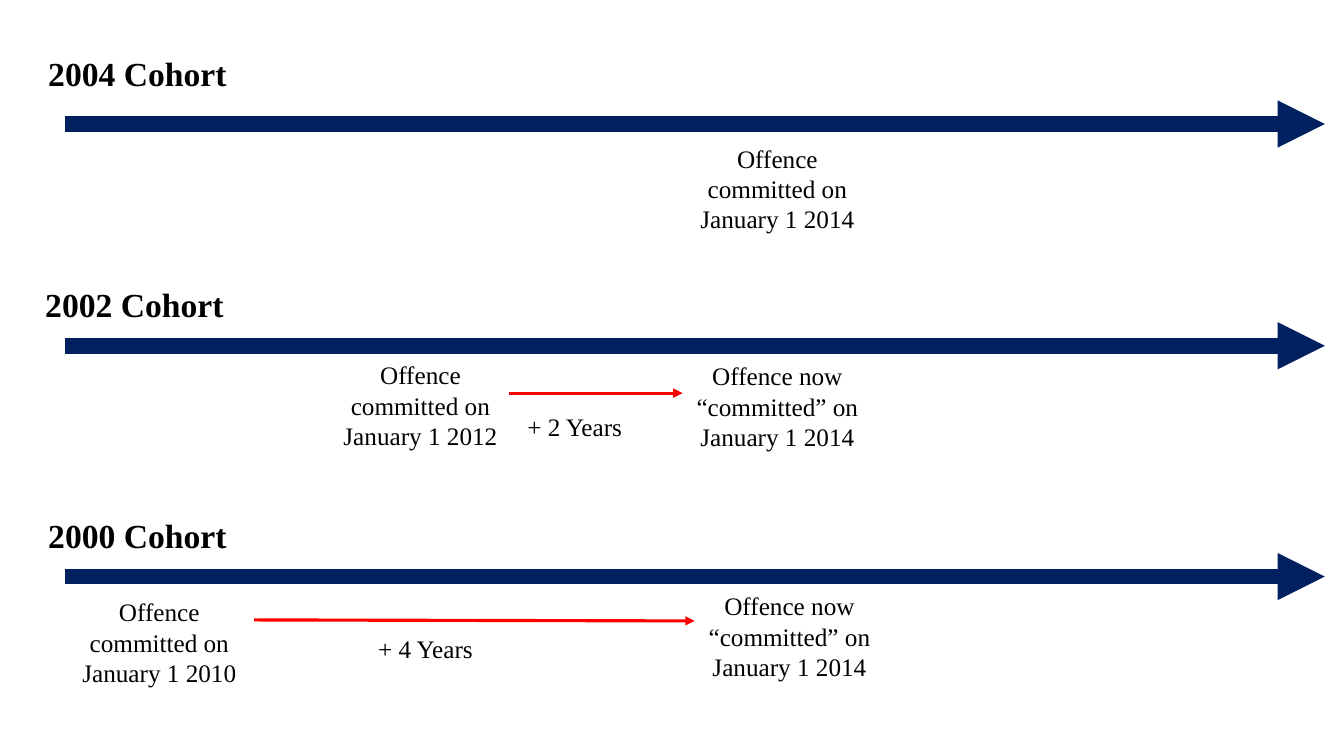
from lxml import etree
from pptx import Presentation
from pptx.dml.color import RGBColor
from pptx.enum import shapes, text
from pptx.oxml.ns import qn
from pptx.util import Inches, Pt

COLORS = {"ink": "000000", "timeline": "002060", "shift": "FF0000"}
FONT = "Times New Roman"


def add_label(page, words, left, top, width, height, size, bold=False, align=text.PP_ALIGN.CENTER):
    box = page.shapes.add_textbox(Inches(left), Inches(top), Inches(width), Inches(height))
    box.text_frame.word_wrap = True
    box.text_frame.auto_size = text.MSO_AUTO_SIZE.SHAPE_TO_FIT_TEXT
    para = box.text_frame.paragraphs[0]
    para.text = words
    para.alignment = align
    para.font.name = FONT
    para.font.size = Pt(size)
    para.font.bold = bold
    para.font.color.rgb = RGBColor.from_string(COLORS["ink"])


def add_arrow(page, start, end, color, weight):
    arrow = page.shapes.add_connector(
        shapes.MSO_CONNECTOR.STRAIGHT, *(Inches(value) for value in start + end)
    )
    arrow.line.color.rgb = RGBColor.from_string(COLORS[color])
    arrow.line.width = Pt(weight)
    etree.SubElement(arrow.line._get_or_add_ln(), qn("a:tailEnd"), type="triangle")
    etree.SubElement(arrow._element.spPr, qn("a:effectLst"))


deck = Presentation()
deck.slide_width = Inches(13.33)
deck.slide_height = Inches(7.5)
page = deck.slides.add_slide(deck.slide_layouts[6])

cohorts = [("2004 Cohort", 0.38, 0.48, 1.23), ("2002 Cohort", 0.35, 2.77, 3.43), ("2000 Cohort", 0.38, 5.06, 5.72)]
for name, left, top, axis in cohorts:
    add_label(page, name, left, top, 2.52, 0.5, 24, True, text.PP_ALIGN.LEFT)
    add_arrow(page, (0.64, axis), (13.14, axis), "timeline", 11.25)

offences = [
    ("Offence committed on January 1 2014", 6.77, 1.37),
    ("Offence committed on January 1 2012", 3.23, 3.52),
    ("Offence now “committed” on January 1 2014", 6.77, 3.53),
    ("Offence committed on January 1 2010", 0.64, 5.87),
    ("Offence now “committed” on January 1 2014", 6.89, 5.81),
]
for words, left, top in offences:
    add_label(page, words, left, top, 1.88, 1.01, 18)

shifts = [
    ("+ 2 Years", 4.76, 4.03, (5.05, 3.9), (6.77, 3.9)),
    ("+ 4 Years", 3.28, 6.23, (2.52, 6.15), (6.89, 6.16)),
]
for words, left, top, start, end in shifts:
    add_label(page, words, left, top, 1.88, 0.4, 18)
    add_arrow(page, start, end, "shift", 2.25)

deck.save("out.pptx")
